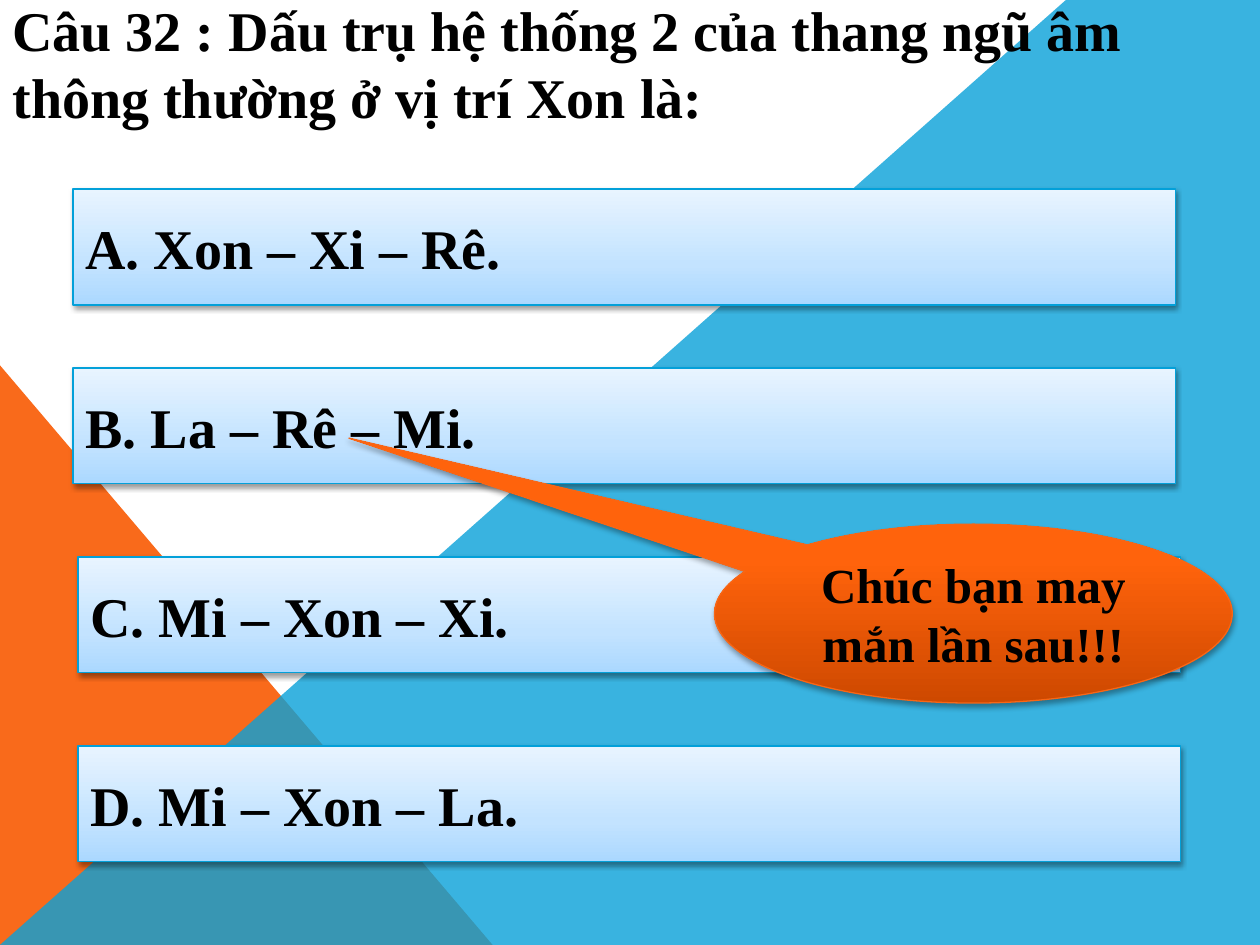
import copy
import pptx
import pptx.dml.color
import pptx.enum.shapes
import pptx.enum.text
import pptx.oxml
import pptx.oxml.ns
import pptx.util

Inches = pptx.util.Inches
RGBColor = pptx.dml.color.RGBColor
Shape = pptx.enum.shapes.MSO_SHAPE
Align = pptx.enum.text.PP_ALIGN

QUESTION = "Câu 32 : Dấu trụ hệ thống 2 của thang ngũ âm thông thường ở vị trí Xon là:"
ANSWERS = [
    ("A. Xon – Xi – Rê.", 0.58, 1.5),
    ("B. La – Rê – Mi.", 0.58, 2.92),
    ("C. Mi – Xon – Xi.", 0.62, 4.42),
    ("D. Mi – Xon – La.", 0.62, 5.92),
]
FEEDBACK = "Chúc bạn may mắn lần sau!!!"

WIDTH, HEIGHT = 10, 7.5
ANSWER_SIZE = (8.75, 0.92)
CALLOUT_BOX = (5.67, 4.16, 4.11, 1.42)
CALLOUT_TIP = (-1.206, -0.981)

BLACK = RGBColor(0, 0, 0)
ORANGE = RGBColor(0xF9, 0x6A, 0x1B)
BLUE = RGBColor(0x08, 0xA1, 0xD9)
ANSWER_LINE = RGBColor(0x03, 0xA0, 0xD9)
CALLOUT_LINE = RGBColor(0xF9, 0x66, 0x15)
ANSWER_STOPS = [
    (0, RGBColor(0xAB, 0xD8, 0xFF)),
    (0.35, RGBColor(0xC3, 0xE3, 0xFF)),
    (1, RGBColor(0xE8, 0xF4, 0xFF)),
]
CALLOUT_STOPS = [
    (0, RGBColor(0xCE, 0x49, 0x00)),
    (0.8, RGBColor(0xFF, 0x63, 0x0C)),
    (1, RGBColor(0xFF, 0x64, 0x0E)),
]


def write_text(shape, text, size, alignment=Align.LEFT):
    frame = shape.text_frame
    frame.word_wrap = True
    frame.vertical_anchor = pptx.enum.text.MSO_ANCHOR.MIDDLE
    paragraph = frame.paragraphs[0]
    paragraph.text = text
    paragraph.alignment = alignment
    font = paragraph.font
    font.name, font.size, font.bold = "Times New Roman", pptx.util.Pt(size), True
    font.color.rgb = BLACK


def paint_flat(shape, color):
    shape.shadow.inherit = False
    shape.fill.solid()
    shape.fill.fore_color.rgb = color
    shape.line.fill.background()


def paint_raised(shape, stops, line_color, shadow_opacity, shadow_distance):
    shape.fill.gradient()
    shape.fill.gradient_angle = 90
    stop_list = shape._element.xpath(".//a:gsLst")[0]
    stop_list.insert(1, copy.deepcopy(stop_list[0]))
    for stop, (position, color) in zip(shape.fill.gradient_stops, stops):
        stop.position = position
        stop.color.rgb = color
    shape.line.color.rgb = line_color
    shape.line.width = pptx.util.Pt(0.75)
    shape.shadow.inherit = False
    effects = shape._element.xpath("./p:spPr/a:effectLst")[0]
    effects.append(pptx.oxml.parse_xml(
        f'<a:outerShdw {pptx.oxml.ns.nsdecls("a")} blurRad="{pptx.util.Pt(3.1)}" '
        f'dist="{pptx.util.Pt(shadow_distance)}" dir="5400000" rotWithShape="0">'
        f'<a:srgbClr val="000000"><a:alpha val="{shadow_opacity * 1000}"/></a:srgbClr>'
        '</a:outerShdw>'))


def add_background(shapes):
    triangle = shapes.add_shape(
        Shape.RIGHT_TRIANGLE, 0, Inches(2.9), Inches(3.91), Inches(HEIGHT - 2.9))
    paint_flat(triangle, ORANGE)
    builder = shapes.build_freeform(0, Inches(HEIGHT))
    corners = [(8.46, 0), (WIDTH, 0), (WIDTH, HEIGHT)]
    builder.add_line_segments([(Inches(x), Inches(y)) for x, y in corners], close=True)
    wedge = builder.convert_to_shape()
    paint_flat(wedge, BLUE)
    color = wedge._element.xpath("./p:spPr/a:solidFill/a:srgbClr")[0]
    color.append(pptx.oxml.parse_xml(
        f'<a:alpha {pptx.oxml.ns.nsdecls("a")} val="80000"/>'))


def main():
    presentation = pptx.Presentation()
    presentation.slide_width = Inches(WIDTH)
    presentation.slide_height = Inches(HEIGHT)
    shapes = presentation.slides.add_slide(presentation.slide_layouts[6]).shapes

    add_background(shapes)
    title = shapes.add_textbox(0, 0, Inches(WIDTH), Inches(1))
    write_text(title, QUESTION, 32)

    for text, left, top in ANSWERS:
        answer = shapes.add_shape(
            Shape.RECTANGLE, *map(Inches, (left, top, *ANSWER_SIZE)))
        paint_raised(answer, ANSWER_STOPS, ANSWER_LINE, 38, 1.6)
        write_text(answer, text, 32)

    callout = shapes.add_shape(Shape.OVAL_CALLOUT, *map(Inches, CALLOUT_BOX))
    for index, offset in enumerate(CALLOUT_TIP):
        callout.adjustments[index] = offset
    paint_raised(callout, CALLOUT_STOPS, CALLOUT_LINE, 35, 1.8)
    write_text(callout, FEEDBACK, 28, Align.CENTER)

    presentation.save("out.pptx")


if __name__ == "__main__":
    main()
